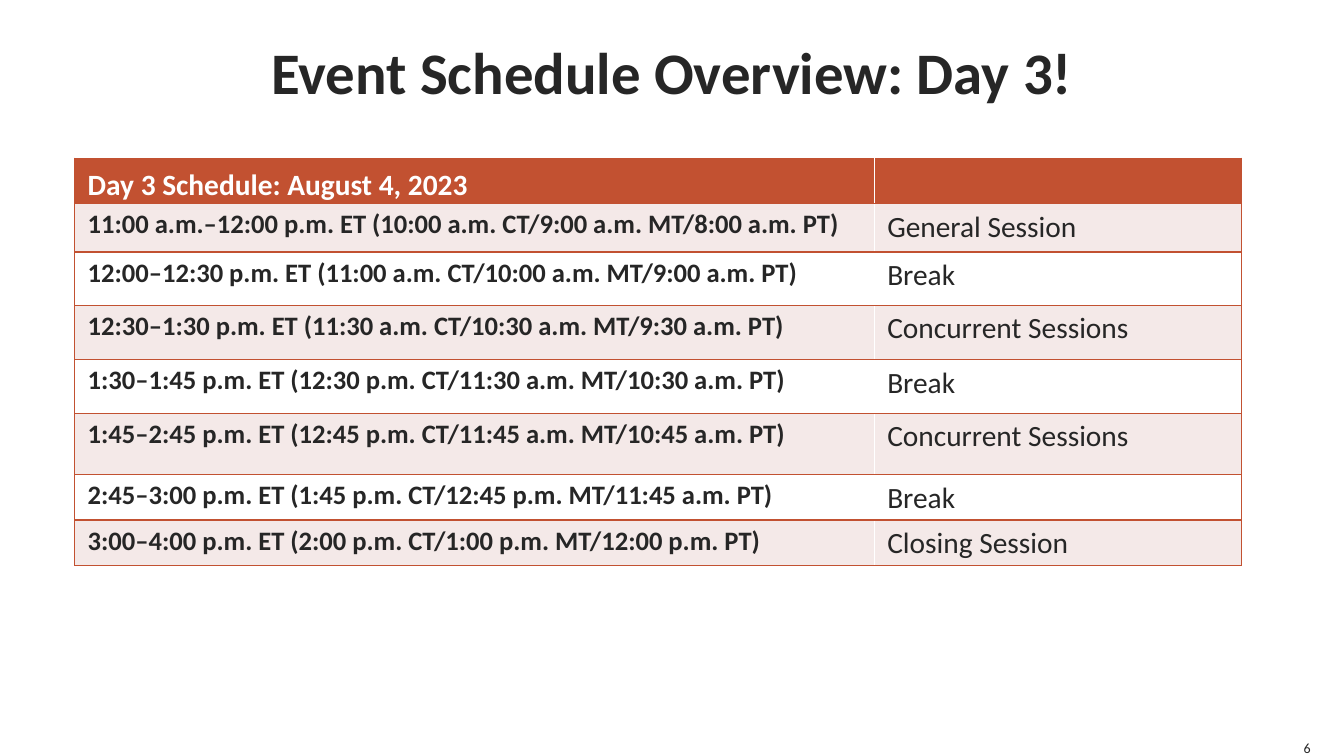
from lxml import etree
from pptx import Presentation
from pptx.dml.color import RGBColor
from pptx.enum.text import MSO_ANCHOR, PP_ALIGN
from pptx.oxml.ns import qn
from pptx.util import Inches, Pt

TOP, MIDDLE, BOTTOM = MSO_ANCHOR.TOP, MSO_ANCHOR.MIDDLE, MSO_ANCHOR.BOTTOM
CENTER, RIGHT = PP_ALIGN.CENTER, PP_ALIGN.RIGHT
RUST, BLUSH, WHITE, INK = "C25131", "F4E9E8", "FFFFFF", "262626"

TITLE = "Event Schedule Overview: Day 3!"
PAGE_NUMBER = "6"
SCHEDULE = [
    ("Day 3 Schedule: August 4, 2023", "", 0.45),
    ("11:00 a.m.–12:00 p.m. ET (10:00 a.m. CT/9:00 a.m. MT/8:00 a.m. PT)", "General Session", 0.48),
    ("12:00–12:30 p.m. ET (11:00 a.m. CT/10:00 a.m. MT/9:00 a.m. PT)", "Break", 0.53),
    ("12:30–1:30 p.m. ET (11:30 a.m. CT/10:30 a.m. MT/9:30 a.m. PT)", "Concurrent Sessions", 0.54),
    ("1:30–1:45 p.m. ET (12:30 p.m. CT/11:30 a.m. MT/10:30 a.m. PT)", "Break", 0.53),
    ("1:45–2:45 p.m. ET (12:45 p.m. CT/11:45 a.m. MT/10:45 a.m. PT)", "Concurrent Sessions", 0.61),
    ("2:45–3:00 p.m. ET (1:45 p.m. CT/12:45 p.m. MT/11:45 a.m. PT)", "Break", 0.45),
    ("3:00–4:00 p.m. ET (2:00 p.m. CT/1:00 p.m. MT/12:00 p.m. PT)", "Closing Session", 0.45),
]
COLUMN_WIDTHS = (7.93, 3.64)
COLUMN_BORDERS = (("a:lnL", "a:lnT", "a:lnB"), ("a:lnR", "a:lnT", "a:lnB"))
CELL_MARGINS = {"margin_left": 0.13, "margin_right": 0.13, "margin_top": 0, "margin_bottom": 0}


def color(value):
    return RGBColor.from_string(value)


def write(frame, text, size, ink, bold, paragraph_format):
    paragraph = frame.paragraphs[0]
    paragraph.text = text
    for name, value in paragraph_format.items():
        setattr(paragraph, name, value)
    font = paragraph.font
    for name, value in {"name": "Calibri", "size": Pt(size), "bold": bold}.items():
        setattr(font, name, value)
    font.color.rgb = color(ink)


def place(shape, left, top, width, height, anchor):
    box = {"left": left, "top": top, "width": width, "height": height}
    for name, value in box.items():
        setattr(shape, name, Inches(value))
    frame = shape.text_frame
    for name in CELL_MARGINS:
        setattr(frame, name, 0)
    frame.vertical_anchor = anchor
    return frame


def draw_borders(cell, sides):
    properties = cell._tc.get_or_add_tcPr()
    ordered = [side for side in ("a:lnL", "a:lnR", "a:lnT", "a:lnB") if side in sides]
    for position, side in enumerate(ordered):
        line = etree.Element(qn(side), w=str(Pt(1)))
        fill = etree.SubElement(line, qn("a:solidFill"))
        etree.SubElement(fill, qn("a:srgbClr"), val=RUST)
        properties.insert(position, line)


def add_schedule(slide):
    height = sum(row[2] for row in SCHEDULE)
    table = slide.shapes.add_table(
        len(SCHEDULE), len(COLUMN_WIDTHS), Inches(0.74), Inches(1.57),
        Inches(sum(COLUMN_WIDTHS)), Inches(height)).table
    for column, width in zip(table.columns, COLUMN_WIDTHS):
        column.width = Inches(width)
    for row_index, (time, session, row_height) in enumerate(SCHEDULE):
        header = row_index == 0
        table.rows[row_index].height = Inches(row_height)
        background = RUST if header else (WHITE, BLUSH)[row_index % 2]
        spacing = {
            "line_spacing": 1.15,
            "space_before": Pt({0: 6, 1: 4}.get(row_index, 3)),
            "space_after": Pt(6 if header else 3),
        }
        for column_index, text in enumerate((time, session)):
            cell = table.cell(row_index, column_index)
            for name, value in CELL_MARGINS.items():
                setattr(cell, name, Inches(value))
            cell.vertical_anchor = BOTTOM if header else TOP
            cell.fill.solid()
            cell.fill.fore_color.rgb = color(background)
            draw_borders(cell, COLUMN_BORDERS[column_index])
            if text:
                is_time = column_index == 0
                size = 19 if is_time and not header else 21
                write(cell.text_frame, text, size, WHITE if header else INK, is_time, spacing)


def main():
    presentation = Presentation()
    presentation.slide_width = Inches(13.33)
    presentation.slide_height = Inches(7.5)
    slide = presentation.slides.add_slide(presentation.slide_layouts[5])

    title = place(slide.shapes.title, 0.5, 0, 12.33, 1.4, MIDDLE)
    write(title, TITLE, 42, INK, True, {"alignment": CENTER})

    add_schedule(slide)

    number_box = slide.shapes.add_textbox(0, 0, 0, 0)
    number = place(number_box, 12.83, 7.33, 0.17, 0.17, BOTTOM)
    number.word_wrap = False
    write(number, PAGE_NUMBER, 10, INK, False, {"alignment": RIGHT, "space_after": Pt(6)})

    presentation.save("out.pptx")


if __name__ == "__main__":
    main()
